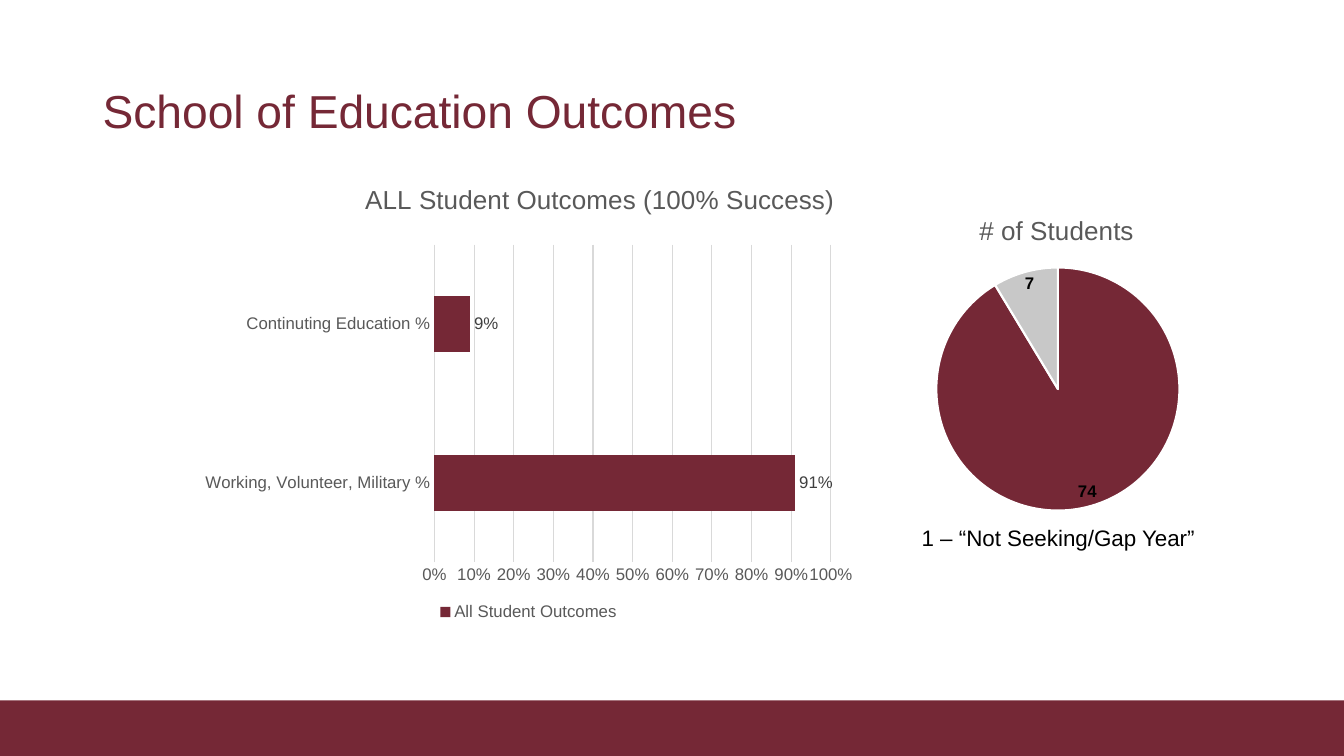
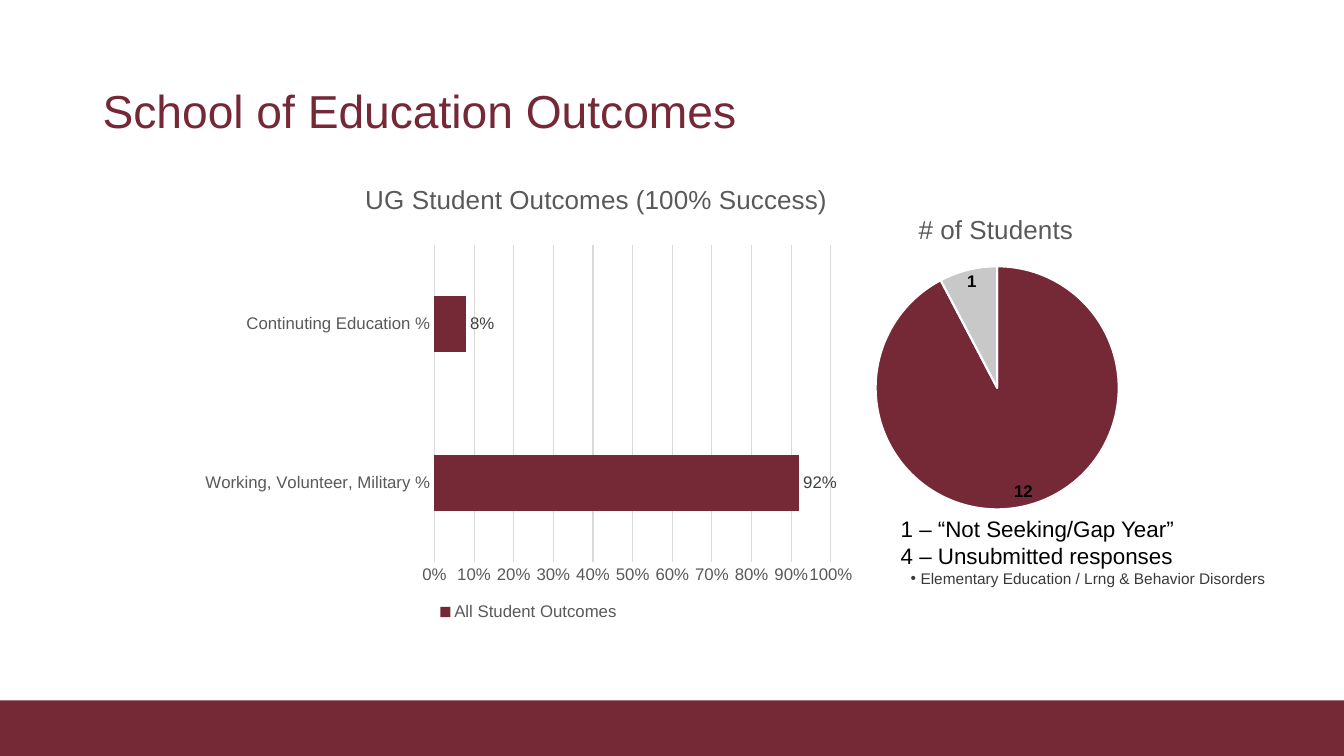
from dataclasses import dataclass

import pptx
import pptx.chart.data
import pptx.dml.color
import pptx.enum.chart
import pptx.enum.shapes
import pptx.enum.text
import pptx.oxml
import pptx.oxml.ns
import pptx.util
from pptx.util import Cm

FONT = "Arial"
MAROON, SILVER, WHITE, BLACK = "752836", "C8C8C8", "FFFFFF", "000000"
AXIS_GREY, LABEL_GREY, GRID_GREY, NOTE_GREY = "595959", "404040", "D9D9D9", "3B3838"
TITLE = "School of Education Outcomes"
CATEGORIES = ("Working, Volunteer, Military %", "Continuting Education %")


@dataclass
class Box:
    left: float
    top: float
    width: float
    height: float

    def lengths(self) -> tuple:
        return Cm(self.left), Cm(self.top), Cm(self.width), Cm(self.height)


@dataclass
class Note:
    text: str
    size: float = 16
    color: str = BLACK
    bullet: bool = False


@dataclass
class Outcome:
    heading: str
    shares: tuple
    counts: tuple
    pie: Box
    note_box: Box
    notes: list
    centered: bool = False


BAND = Box(0, 17.65, 33.87, 1.4)
TITLE_BOX = Box(2.33, 1.02, 29.21, 3.68)
BAR_BOX = Box(4.85, 4.47, 16.94, 11.28)
GAP_YEAR = Note("1 – “Not Seeking/Gap Year”")

OUTCOMES = [
    Outcome("ALL Student Outcomes (100% Success)", (0.91, 0.09), (74, 7),
            Box(20.83, 4.92, 11.66, 8.28), Box(22.86, 13.08, 7.62, 0.94),
            [GAP_YEAR], centered=True),
    Outcome("UG Student Outcomes (100% Success)", (0.92, 0.08), (12, 1),
            Box(19.3, 4.89, 11.66, 8.28), Box(22.45, 12.85, 10.11, 2.08),
            [GAP_YEAR, Note("4 – Unsubmitted responses"),
             Note("Elementary Education / Lrng & Behavior Disorders", 11, NOTE_GREY, True)]),
]


def rgb(color: str):
    return pptx.dml.color.RGBColor.from_string(color)


def style_font(font, size: float, color: str, bold: bool = False) -> None:
    font.name = FONT
    font.size = pptx.util.Pt(size)
    font.bold = bold
    font.color.rgb = rgb(color)


def style_fill(fill, color: str) -> None:
    fill.solid()
    fill.fore_color.rgb = rgb(color)


def style_line(line, color: str, width: float) -> None:
    line.color.rgb = rgb(color)
    line.width = pptx.util.Pt(width)


def set_layout(parent, index: int, **fractions: float) -> None:
    """Place a chart part by fractions of the chart area."""
    for old in parent.xpath("c:layout"):
        parent.remove(old)
    inner = '<c:layoutTarget val="inner"/>' if "w" in fractions else ""
    values = "".join(f'<c:{k} val="{v}"/>' for k, v in fractions.items())
    parent.insert(index, pptx.oxml.parse_xml(
        f'<c:layout {pptx.oxml.ns.nsdecls("c")}><c:manualLayout>{inner}'
        f'<c:xMode val="edge"/><c:yMode val="edge"/>{values}</c:manualLayout></c:layout>'))


def add_chart(s, kind, box: Box, heading: str, data, heading_at: tuple, plot_at: tuple):
    chart = s.shapes.add_chart(kind, *box.lengths(), data).chart
    style_font(chart.font, 10, BLACK)
    chart.has_title = True
    tf = chart.chart_title.text_frame
    tf.text = heading
    style_font(tf.paragraphs[0].runs[0].font, 18.6, AXIS_GREY)
    set_layout(chart.element.xpath("c:chart/c:title")[0], 1, **dict(zip("xy", heading_at)))
    set_layout(chart.element.xpath("c:chart/c:plotArea")[0], 0, **dict(zip("xywh", plot_at)))
    return chart


def add_labels(series, position, color: str, number_format: str, bold: bool) -> None:
    labels = series.data_labels
    labels.show_value = True
    labels.position = position
    labels.number_format = number_format
    labels.number_format_is_linked = False
    style_font(labels.font, 12, color, bold)


def add_bar_chart(s, outcome: Outcome) -> None:
    enum = pptx.enum.chart
    data = pptx.chart.data.CategoryChartData(number_format="0%")
    data.categories = CATEGORIES
    data.add_series("All Student Outcomes", outcome.shares)
    chart = add_chart(s, enum.XL_CHART_TYPE.BAR_CLUSTERED, BAR_BOX, outcome.heading, data,
                      (0.25, 0), (0.36, 0.15, 0.59, 0.71))
    # Axes
    for axis in (chart.category_axis, chart.value_axis):
        axis.major_tick_mark = axis.minor_tick_mark = enum.XL_TICK_MARK.NONE
        style_font(axis.tick_labels.font, 12, AXIS_GREY)
    style_line(chart.category_axis.format.line, GRID_GREY, 0.75)
    axis = chart.value_axis
    axis.minimum_scale, axis.maximum_scale, axis.major_unit = 0, 1, 0.1
    axis.tick_labels.number_format = "0%"
    axis.tick_labels.number_format_is_linked = False
    axis.format.line.fill.background()
    style_line(axis.major_gridlines.format.line, GRID_GREY, 0.75)
    # Legend
    chart.has_legend = True
    chart.legend.position = enum.XL_LEGEND_POSITION.BOTTOM
    chart.legend.include_in_layout = False
    style_font(chart.legend.font, 12, AXIS_GREY)
    # Bars
    plot = chart.plots[0]
    plot.gap_width = 182
    plot.vary_by_categories = False
    style_fill(plot.series[0].format.fill, MAROON)
    add_labels(plot.series[0], enum.XL_LABEL_POSITION.OUTSIDE_END, LABEL_GREY, "0%", False)


def add_pie_chart(s, outcome: Outcome) -> None:
    enum = pptx.enum.chart
    heading = "# of Students"
    data = pptx.chart.data.CategoryChartData()
    data.categories = ("1", "2")
    data.add_series(heading, outcome.counts)
    chart = add_chart(s, enum.XL_CHART_TYPE.PIE, outcome.pie, heading, data,
                      (0.32, 0.04), (0.23, 0.22, 0.54, 0.74))
    chart.has_legend = False
    chart.plots[0].vary_by_categories = True
    series = chart.plots[0].series[0]
    for i, color in enumerate((MAROON, SILVER)):
        point = series.points[i]
        style_fill(point.format.fill, color)
        style_line(point.format.line, WHITE, 1.5)
    add_labels(series, enum.XL_LABEL_POSITION.BEST_FIT, BLACK, "General", True)


def add_notes(s, outcome: Outcome) -> None:
    tf = s.shapes.add_textbox(*outcome.note_box.lengths()).text_frame
    tf.word_wrap = True
    for i, note in enumerate(outcome.notes):
        p = tf.add_paragraph() if i else tf.paragraphs[0]
        p.text = note.text
        if outcome.centered:
            p.alignment = pptx.enum.text.PP_ALIGN.CENTER
        if note.bullet:
            pPr = p._p.get_or_add_pPr()
            pPr.set("marL", str(Cm(0.5)))
            pPr.set("indent", str(Cm(-0.25)))
            for tag in (f'buFont {pptx.oxml.ns.nsdecls("a")} typeface="{FONT}"',
                        f'buChar {pptx.oxml.ns.nsdecls("a")} char="•"'):
                pPr.append(pptx.oxml.parse_xml(f"<a:{tag}/>"))
        style_font(p.runs[0].font, note.size, note.color)


def add_title(s) -> None:
    sp = s.shapes.title
    sp.left, sp.top, sp.width, sp.height = TITLE_BOX.lengths()
    tf = sp.text_frame
    tf.text = TITLE
    tf.vertical_anchor = pptx.enum.text.MSO_ANCHOR.MIDDLE
    p = tf.paragraphs[0]
    p.alignment = pptx.enum.text.PP_ALIGN.LEFT
    p.line_spacing = 0.9
    style_font(p.runs[0].font, 33, MAROON)


def add_band(s) -> None:
    sp = s.shapes.add_shape(pptx.enum.shapes.MSO_SHAPE.RECTANGLE, *BAND.lengths())
    sp.shadow.inherit = False
    style_fill(sp.fill, MAROON)
    sp.line.fill.background()


def main() -> None:
    prs = pptx.Presentation()
    prs.slide_width, prs.slide_height = Cm(33.87), Cm(19.05)
    title_only = prs.slide_layouts[5]
    for outcome in OUTCOMES:
        s = prs.slides.add_slide(title_only)
        add_band(s)
        add_title(s)
        add_bar_chart(s, outcome)
        add_pie_chart(s, outcome)
        add_notes(s, outcome)
    prs.save("out.pptx")


if __name__ == "__main__":
    main()
